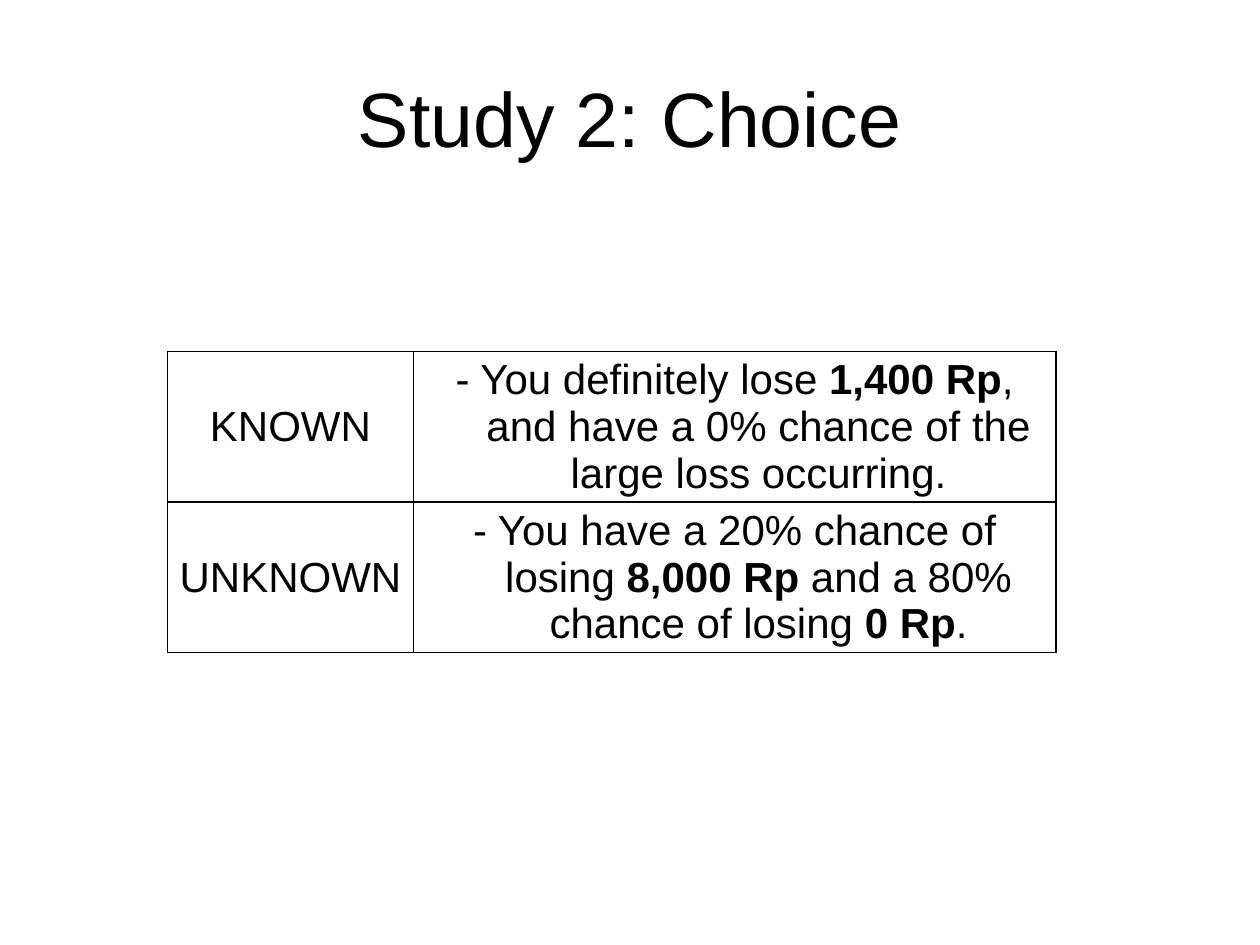
from lxml import etree
from pptx import Presentation, util as u
from pptx.dml.color import RGBColor
from pptx.enum import text
from pptx.oxml.ns import qn

COLORS = {"ink": "000000", "paper": "FFFFFF"}
FONT = "Arial"
WIDTH, HEIGHT = u.Inches(10), u.Inches(7.5)
COLUMNS = (1.95, 5.1)
ROW_HEIGHT = 1.19
HANGING = u.Inches(0.38)

# Each cell is a list of (words, bold) spans.
CHOICES = [
    [[("KNOWN", False)],
     [("- You definitely lose ", False), ("1,400 Rp", True),
      (", and have a 0% chance of the large loss occurring.", False)]],
    [[("UNKNOWN", False)],
     [("- You have a 20% chance of losing ", False), ("8,000 Rp", True),
      (" and a 80% chance of losing ", False), ("0 Rp", True), (".", False)]],
]


def style_paragraph(para, size):
    para.alignment = text.PP_ALIGN.CENTER
    para.font.name = FONT
    para.font.size = u.Pt(size)
    para.font.color.rgb = RGBColor.from_string(COLORS["ink"])


def add_title(page, words):
    title = page.shapes.title
    title.left, title.top = int(WIDTH * 0.05), int(HEIGHT * 0.04)
    title.width, title.height = int(WIDTH * 0.9), u.Inches(1.25)
    title.text_frame.text = words
    title.text_frame.vertical_anchor = text.MSO_ANCHOR.MIDDLE
    style_paragraph(title.text_frame.paragraphs[0], 44)


def add_borders(cell):
    """Draw all four sides; the schema wants the lines before the fill."""
    properties = cell._tc.get_or_add_tcPr()
    for place, side in enumerate(("lnL", "lnR", "lnT", "lnB")):
        line = etree.Element(qn(f"a:{side}"), w=str(u.Pt(1)))
        fill = etree.SubElement(line, qn("a:solidFill"))
        etree.SubElement(fill, qn("a:srgbClr"), val=COLORS["ink"])
        properties.insert(place, line)


def fill_cell(cell, spans):
    cell.fill.solid()
    cell.fill.fore_color.rgb = RGBColor.from_string(COLORS["paper"])
    cell.vertical_anchor = text.MSO_ANCHOR.MIDDLE
    cell.margin_left = cell.margin_right = u.Inches(0.07)
    cell.margin_top = cell.margin_bottom = u.Inches(0.04)
    para = cell.text_frame.paragraphs[0]
    style_paragraph(para, 24)
    indents = para._p.get_or_add_pPr()
    indents.set("marL", str(HANGING))
    indents.set("indent", str(-HANGING))
    for words, bold in spans:
        span = para.add_run()
        span.text = words
        span.font.bold = bold
    add_borders(cell)


def add_choice_table(page, rows):
    frame = page.shapes.add_table(
        len(rows), len(COLUMNS), u.Inches(1.33), u.Inches(2.79),
        u.Inches(sum(COLUMNS)), u.Inches(ROW_HEIGHT * len(rows)))
    table = frame.table
    table.first_row = table.horz_banding = False
    for column, width in zip(table.columns, COLUMNS):
        column.width = u.Inches(width)
    for row, contents in zip(table.rows, rows):
        row.height = u.Inches(ROW_HEIGHT)
        for cell, spans in zip(row.cells, contents):
            fill_cell(cell, spans)


def main():
    deck = Presentation()
    deck.slide_width, deck.slide_height = WIDTH, HEIGHT
    page = deck.slides.add_slide(deck.slide_layouts.get_by_name("Title Only"))
    add_title(page, "Study 2: Choice")
    add_choice_table(page, CHOICES)
    deck.save("out.pptx")


if __name__ == "__main__":
    main()
